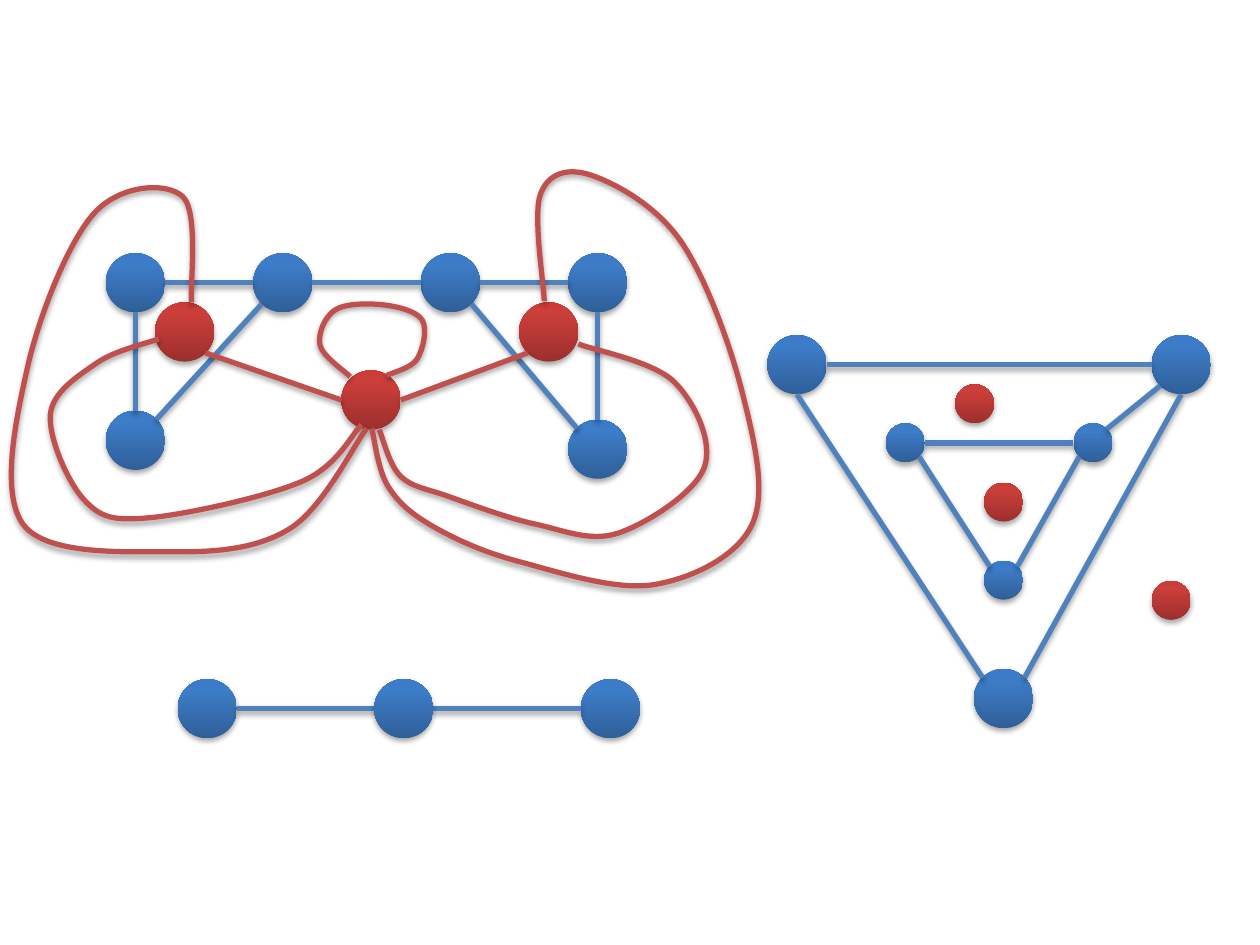
import math

import pptx
import pptx.dml.color
import pptx.enum.shapes
import pptx.oxml
import pptx.oxml.ns
import pptx.util

qn = pptx.oxml.ns.qn
ns = pptx.oxml.ns.nsdecls("a")
u = pptx.util.Cm(2.54)
big, small = 0.47, 0.31
compass = ["e", "se", "s", "sw", "w", "nw", "n", "ne"]

colours = {
    "blue": {"line": "4F81BD", "stops": {0: "2F5F99", 80: "3D7CC7", 100: "3A7CCB"}},
    "red": {"line": "C0504D", "stops": {0: "9C2F2D", 80: "CB3E3A", 100: "CE3B37"}},
    "shadow": "000000",
}

graphs = [
    ("blue", [
        (0.84, 2.01, big), (2.01, 2.01, big), (0.84, 3.26, big),
        (3.34, 2.01, big), (4.51, 2.01, big), (4.51, 3.33, big),
        (0, "e", 1, "w"), (0, "s", 2, "n"), (1, "sw", 2, "ne"), (3, "e", 4, "w"),
        (4, "s", 5, "n"), (3, "se", 5, "nw"), (1, "e", 3, "w"),
    ], []),
    ("red", [
        (2.71, 2.94, big), (1.23, 2.4, big), (4.12, 2.4, big),
        (2, "sw", 0, "e"), (0, "w", 1, "se"),
    ], [
        [(2.87, 3.37), (2.4, 3.82), (1.18, 4.11), (0.67, 3.97), (0.4, 3.29), (0.77, 2.88),
         (1.26, 2.69)],
        [(3.01, 3.41), (3.18, 3.78), (3.56, 3.94), (4.25, 4.16), (4.91, 4.23), (5.59, 3.71),
         (5.35, 3.03), (4.59, 2.73)],
        [(2.91, 3.4), (2.31, 4.19), (1.38, 4.38), (0.19, 4.17), (0.22, 2.91), (0.75, 1.69),
         (1.45, 1.56), (1.52, 2.4)],
        [(2.95, 3.4), (3.08, 3.86), (3.44, 4.18), (4.13, 4.46), (5.19, 4.64), (5.97, 4.16),
         (5.89, 3.11), (5.4, 1.91), (4.69, 1.39), (4.29, 1.54), (4.32, 2.39)],
        [(2.78, 2.99), (2.54, 2.74), (2.66, 2.46), (3.04, 2.42), (3.35, 2.54), (3.31, 2.85),
         (3.07, 2.98)],
    ]),
    ("blue", [
        (6.09, 2.66, big), (9.14, 2.66, big), (7.73, 5.31, big),
        (0, "e", 1, "w"), (1, "s", 2, "ne"), (0, "s", 2, "nw"),
        (7.81, 4.45, small), (7.03, 3.36, small), (8.52, 3.36, small),
        (3, "nw", 4, "se"), (3, "ne", 5, "sw"), (4, "e", 5, "w"), (5, "ne", 1, "sw"),
    ], []),
    ("red", [(7.81, 3.83, small), (7.58, 3.05, small), (9.14, 4.61, small)], []),
    ("blue", [(1.41, 5.39, big), (4.61, 5.39, big), (0, "e", 1, "w"), (2.97, 5.39, big)], []),
]


def add_curve(shapes, points):
    ends = [points[0], *points, points[-1]]
    bends = []
    for before, start, end, after in zip(ends, ends[1:], ends[2:], ends[3:]):
        bends.append([a + (b - c) / 6 for a, b, c in zip(start, end, before)])
        bends.append([a - (b - c) / 6 for a, b, c in zip(end, after, start)])
        bends.append(end)
    builder = shapes.build_freeform(*[round(v * u) for v in points[0]])
    builder.add_line_segments([(round(x * u), round(y * u)) for x, y in bends], close=False)
    sp = builder.convert_to_shape()
    for i, seg in enumerate(sp._element.spPr.findall(".//" + qn("a:lnTo"))):
        if i % 3 == 0:
            bezier = seg
            bezier.tag = qn("a:cubicBezTo")
        else:
            bezier.append(seg[0])
            seg.getparent().remove(seg)
    sp.fill.background()
    return sp


def finish(sp, line):
    if line:
        sp.line.color.rgb = pptx.dml.color.RGBColor.from_string(line)
        sp.line.width = pptx.util.Pt(3)
    else:
        sp.line.fill.background()
    sp._element.spPr.append(pptx.oxml.parse_xml(
        f'<a:effectLst {ns}><a:outerShdw blurRad="40000" dist="23000" dir="5400000" '
        f'rotWithShape="0"><a:srgbClr val="{colours["shadow"]}"><a:alpha val="35000"/>'
        '</a:srgbClr></a:outerShdw></a:effectLst>'))


prs = pptx.Presentation()
prs.slide_width = pptx.util.Cm(25.4)
prs.slide_height = pptx.util.Cm(19.05)
s = prs.slides.add_slide(prs.slide_layouts[6])

for name, items, curves in graphs:
    shapes = s.shapes.add_group_shape().shapes
    palette = colours[name]
    nodes = []
    for item in items:
        if len(item) == 3:
            x, y, d = [round(v * u) for v in item]
            sp = shapes.add_shape(pptx.enum.shapes.MSO_SHAPE.OVAL, x, y, d, d)
            nodes.append((x + d / 2, y + d / 2, d / 2))
            sp.fill.gradient()
            sp.fill.gradient_angle = 90
            gs_list = sp._element.spPr.find(".//" + qn("a:gsLst"))
            for gs in list(gs_list):
                gs_list.remove(gs)
            for pos, colour in palette["stops"].items():
                gs_list.append(pptx.oxml.parse_xml(
                    f'<a:gs {ns} pos="{pos * 1000}"><a:srgbClr val="{colour}"/></a:gs>'))
            finish(sp, None)
        else:
            ends = []
            for node, side in (item[:2], item[2:]):
                x, y, r = nodes[node]
                angle = compass.index(side) * math.pi / 4
                ends += [round(x + r * math.cos(angle)), round(y + r * math.sin(angle))]
            sp = shapes.add_connector(pptx.enum.shapes.MSO_CONNECTOR.STRAIGHT, *ends)
            finish(sp, palette["line"])
    for points in curves:
        finish(add_curve(shapes, points), palette["line"])

prs.save("out.pptx")
